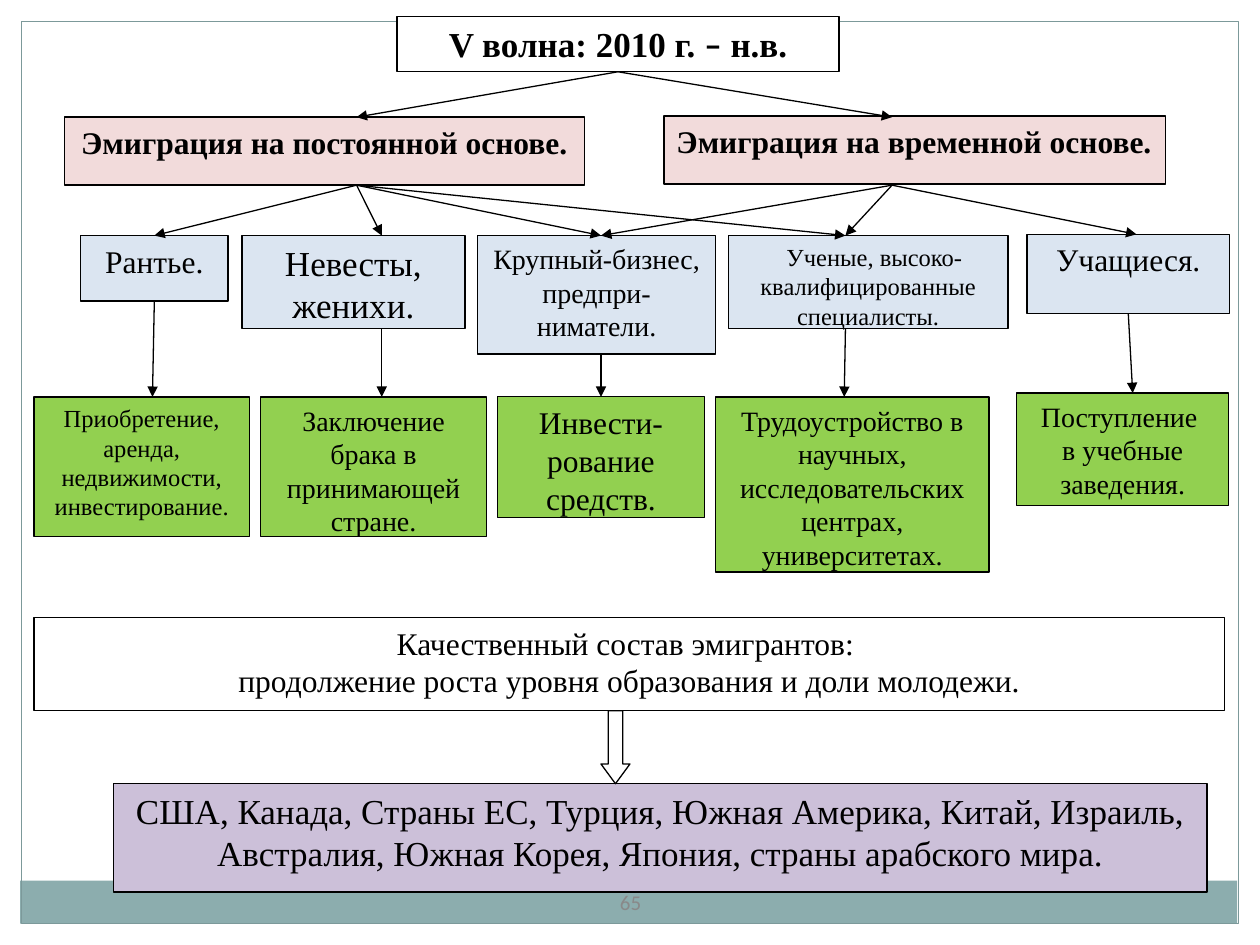
from pptx import Presentation
from pptx.dml.color import RGBColor
from pptx.enum.shapes import MSO_CONNECTOR as CONN, MSO_SHAPE as SHAPE
from pptx.enum.text import MSO_ANCHOR as ANCHOR, PP_ALIGN as ALIGN
from pptx.oxml.ns import qn
from pptx.util import Inches, Pt
from lxml.etree import SubElement

BLACK = RGBColor(0x00, 0x00, 0x00)
WHITE = RGBColor(0xFF, 0xFF, 0xFF)
TEAL = RGBColor(0x8C, 0xAD, 0xAE)
FRAME = RGBColor(0x7C, 0x99, 0x9A)
PINK = RGBColor(0xF2, 0xDB, 0xDB)
BLUE = RGBColor(0xDB, 0xE5, 0xF1)
GREEN = RGBColor(0x92, 0xD0, 0x50)
VIOLET = RGBColor(0xCC, 0xC0, 0xD9)
GRAY = RGBColor(0x89, 0x89, 0x89)
SERIF, SANS = "Times New Roman", "Calibri"
TOP, BOTTOM = 0, 2  # connection sites of a rectangle


class Diagram:
    def __init__(self, s):
        self.s = s
        self.line_width = Pt(0.75)

    def shape(self, at, fill=None, line=None, kind=SHAPE.RECTANGLE):
        sp = self.s.shapes.add_shape(kind, *map(Inches, at))
        sp.shadow.inherit = False
        if fill is None:
            sp.fill.background()
        else:
            sp.fill.solid()
            sp.fill.fore_color.rgb = fill
        if line is None:
            sp.line.fill.background()
        else:
            sp.line.color.rgb = line
            sp.line.width = self.line_width
        return sp

    def set_text(self, tf, text, size, color=BLACK, font=SERIF, bold=False,
                 align=ALIGN.CENTER):
        tf.word_wrap = True
        for i, line in enumerate(text.split("\n")):
            p = tf.paragraphs[0] if i == 0 else tf.add_paragraph()
            p.alignment = align
            p.font.size, p.font.bold, p.font.name = Pt(size), bold, font
            p.font.color.rgb = color
            p.add_run().text = line

    def box(self, at, fill, text, size, **style):
        sp = self.shape(at, fill, BLACK)
        sp.text_frame.vertical_anchor = ANCHOR.TOP
        self.set_text(sp.text_frame, text, size, **style)
        return sp

    def label(self, at, text, size, **style):
        tf = self.s.shapes.add_textbox(*map(Inches, at)).text_frame
        tf.vertical_anchor = ANCHOR.MIDDLE
        tf.margin_left = tf.margin_right = Inches(0.05)
        self.set_text(tf, text, size, **style)

    def arrow(self, start, end, begin_box=None, end_box=None):
        c = self.s.shapes.add_connector(CONN.STRAIGHT, *map(Inches, start + end))
        if begin_box is not None:
            c.begin_connect(begin_box, BOTTOM)
        if end_box is not None:
            c.end_connect(end_box, TOP)
        c.line.color.rgb = BLACK
        c.line.width = self.line_width
        spPr = c._element.spPr
        SubElement(spPr.find(qn("a:ln")), qn("a:tailEnd"), type="triangle")
        SubElement(spPr, qn("a:effectLst"))


def main():
    prs = Presentation()
    prs.slide_width, prs.slide_height = Inches(10), Inches(7.5)
    d = Diagram(prs.slides.add_slide(prs.slide_layouts[6]))

    # Page frame and footer band
    for at in [(0, 0, 10, 0.17), (9.83, 0, 0.17, 7.5), (0, 0, 0.17, 7.5)]:
        d.shape(at, WHITE)
    d.shape((0.16, 6.99, 9.66, 0.34), TEAL)
    d.shape((0.17, 0.17, 9.66, 7.16), line=FRAME)

    # Title and the two kinds of emigration
    title = d.box((3.15, 0.13, 3.51, 0.44), WHITE, "V волна: 2010 г. ", 20, bold=True)
    p = title.text_frame.paragraphs[0]
    dash = p.add_run()
    dash.text, dash.font.name = "–", SANS
    p.add_run().text = " н.в."
    d.box((0.51, 0.93, 4.13, 0.54), PINK, "Эмиграция на постоянной основе.", 18, bold=True)
    d.box((5.27, 0.92, 3.98, 0.54), PINK, "Эмиграция на временной основе.", 18, bold=True,
          align=ALIGN.LEFT)

    # Groups of emigrants
    rentiers = d.box((0.64, 1.87, 1.17, 0.52), BLUE, "Рантье.", 18)
    d.box((1.92, 1.87, 1.77, 0.74), BLUE, "Невесты, женихи.", 20)
    d.box((3.79, 1.87, 1.89, 0.94), BLUE, "Крупный-бизнес, предпри-ниматели.", 16)
    experts = d.box((5.78, 1.87, 2.22, 0.74), BLUE,
                    "Ученые, высоко-квалифицированные специалисты.", 14)
    pPr = experts.text_frame.paragraphs[0]._p.get_or_add_pPr()
    pPr.set("marL", "0")
    pPr.set("indent", str(Inches(0.1)))
    students = d.box((8.15, 1.86, 1.61, 0.63), BLUE, "Учащиеся.", 18)

    # Goals of each group
    d.box((0.27, 3.15, 1.71, 1.11), GREEN,
          "Приобретение, аренда, недвижимости, инвестирование.", 14)
    d.box((2.07, 3.15, 1.79, 1.11), GREEN, "Заключение брака в принимающей стране.", 16)
    investing = d.box((3.95, 3.15, 1.64, 0.96), GREEN, "Инвести-рование средств.", 18)
    d.box((5.68, 3.15, 2.17, 1.39), GREEN,
          "Трудоустройство в научных, исследовательских центрах, университетах.", 16)
    d.box((8.07, 3.12, 1.68, 0.89), GREEN, "Поступление \nв учебные заведения.", 16)

    # Arrows from the title to the kinds, and from the kinds to the groups
    top, permanent, temporary = (4.9, 0.57), 2.83, 7.08
    for x in (permanent, temporary):
        d.arrow(top, (x, 0.93), begin_box=title)
    d.arrow((permanent, 1.47), (1.22, 1.87), end_box=rentiers)
    for x in (3.03, 4.77, 6.71):
        d.arrow((permanent, 1.47), (x, 1.87))
    for end in [(4.77, 1.87), (6.71, 1.87), (9.02, 1.86)]:
        d.arrow((temporary, 1.47), end)

    # Arrows from the groups to their goals
    d.arrow((1.22, 2.39), (1.21, 3.15), begin_box=rentiers)
    d.arrow((3.03, 2.61), (3.03, 3.15))
    d.arrow((4.77, 2.81), (4.76, 3.15), end_box=investing)
    d.arrow((6.71, 2.61), (6.7, 3.15))
    d.arrow((8.94, 2.49), (8.99, 3.12), begin_box=students)

    # Composition of emigrants and destination countries
    d.box((0.27, 4.9, 9.45, 0.74), WHITE,
          "Качественный состав эмигрантов: \n"
          "продолжение роста уровня образования и доли молодежи.", 18)
    d.box((0.9, 6.22, 8.68, 0.86), VIOLET,
          "США, Канада, Страны ЕС, Турция, Южная Америка, Китай, Израиль, "
          "Австралия, Южная Корея, Япония, страны арабского мира.", 20)
    down = d.shape((4.77, 5.64, 0.23, 0.58), WHITE, BLACK, SHAPE.DOWN_ARROW)
    down.adjustments[0], down.adjustments[1] = 0.5, 0.68

    # Slide number
    d.label((4.67, 6.92, 0.67, 0.48), "65", 12, color=GRAY, font=SANS)

    prs.save("out.pptx")


if __name__ == "__main__":
    main()
